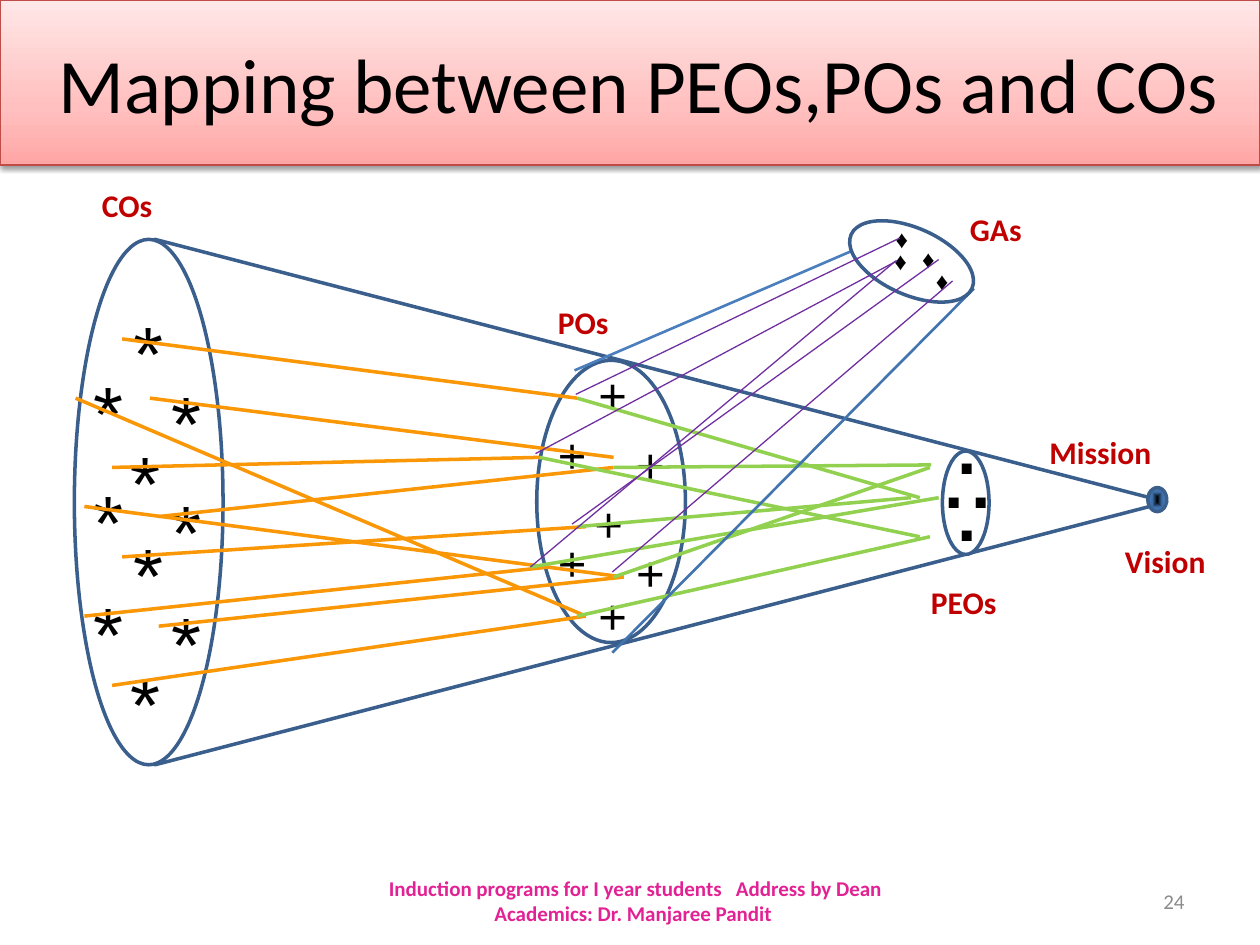
from lxml import etree
from pptx import Presentation
from pptx.dml.color import RGBColor
from pptx.enum import shapes, text
from pptx.oxml import parse_xml
from pptx.oxml.ns import nsdecls, qn
from pptx.util import Inches, Pt


def rgb(code):
    return RGBColor.from_string(code)


def write(frame, words, size, color, font="Calibri", bold=False,
          align=text.PP_ALIGN.LEFT):
    par = frame.paragraphs[0]
    par.alignment = align
    run = par.add_run()
    run.text = words
    run.font.size = Pt(size)
    run.font.name = font
    run.font.bold = bold
    run.font.color.rgb = rgb(color)
    return run


CENTER = text.PP_ALIGN.CENTER
MIDDLE = text.MSO_ANCHOR.MIDDLE
BLUE = "3A5F8C"

deck = Presentation()
deck.slide_width, deck.slide_height = Inches(10), Inches(7.5)
slide = deck.slides.add_slide(deck.slide_layouts[5])
parts = slide.shapes

# Title band with gradient and shadow
title = parts.title
title.left, title.top = Inches(0), Inches(0)
title.width, title.height = Inches(10), Inches(1.31)
title.text_frame.vertical_anchor = MIDDLE
write(title.text_frame, " Mapping between PEOs,POs and COs", 44, "000000",
      align=CENTER)
title.line.color.rgb = rgb("BF4C48")
title.line.width = Pt(0.75)

# Cone, its cross sections and the end point
TRI, OVAL = shapes.MSO_SHAPE.ISOSCELES_TRIANGLE, shapes.MSO_SHAPE.OVAL
outlines = [
    (TRI, 3.16, -0.03, 4.17, 8.03, 90),
    (OVAL, 0.59, 1.9, 1.18, 4.17, 0),
    (OVAL, 4.26, 2.86, 1.18, 2.24, 0),
    (OVAL, 7.48, 3.58, 0.37, 0.82, 0),
    (OVAL, 9.11, 3.87, 0.15, 0.19, 0),
]
ga_oval = (OVAL, 6.97, 1.55, 0.53, 1.05, 294)


def outline(kind, x, y, w, h, turn):
    form = parts.add_shape(kind, Inches(x), Inches(y), Inches(w), Inches(h))
    form.rotation = turn
    form.shadow.inherit = False
    form.fill.solid()
    form.fill.fore_color.rgb = rgb("FFFFFF")
    form.line.color.rgb = rgb(BLUE)
    form.line.width = Pt(2)
    return form


for item in outlines:
    dot = outline(*item)

# Gradients: linear on the title, radial on the end point
fills = [
    (title, [(0, "FFA6A5"), (35, "FFC0BF"), (100, "FFE7E7")],
     '<a:lin ang="16200000" scaled="0"/>'),
    (dot, [(0, "000000"), (50, "3C6CA6"), (100, "4780C5")],
     '<a:path path="shape"><a:fillToRect l="50000" t="50000" r="50000"'
     ' b="50000"/></a:path>'),
]
for form, stops, way in fills:
    marks = "".join(f'<a:gs pos="{pos * 1000}"><a:srgbClr val="{code}"/></a:gs>'
                    for pos, code in stops)
    form.fill.background()
    old = form._element.spPr.find(qn("a:noFill"))
    old.getparent().replace(old, parse_xml(
        f'<a:gradFill {nsdecls("a")} rotWithShape="1"><a:gsLst>{marks}</a:gsLst>'
        f'{way}</a:gradFill>'))
title._element.spPr.append(parse_xml(
    f'<a:effectLst {nsdecls("a")}><a:outerShdw blurRad="39370" dist="20320"'
    ' dir="5400000" rotWithShape="0"><a:srgbClr val="000000">'
    '<a:alpha val="38000"/></a:srgbClr></a:outerShdw></a:effectLst>'))

# Members of each set: sign, size, bold, box size, places
signs = [
    ("*", 44, False, 0.41, 0.84,
     [(0.96, 2.37), (1.26, 2.92), (0.64, 2.84), (0.94, 3.4), (0.96, 4.13),
      (1.26, 4.68), (0.64, 4.6), (0.94, 5.15), (1.26, 3.79), (0.64, 3.71)]),
    ("+", 28, False, 0.4, 0.57,
     [(4.65, 2.84), (4.95, 3.4), (4.33, 3.32), (4.62, 3.87), (4.65, 4.6),
      (4.95, 4.26), (4.33, 4.18)]),
    (".", 40, True, 0.33, 0.77,
     [(7.5, 3.16), (7.5, 3.69), (7.61, 3.43), (7.4, 3.43)]),
]
for sign, size, bold, w, h, spots in signs:
    for x, y in spots:
        box = parts.add_textbox(Inches(x), Inches(y), Inches(w), Inches(h))
        box.text_frame.word_wrap = False
        run = write(box.text_frame, sign, size, "000000", "Arial", bold, CENTER)
        run.font._element.insert(0, parse_xml(
            f'<a:ln {nsdecls("a")} w="18415"><a:solidFill>'
            '<a:srgbClr val="FFFFFF"/></a:solidFill></a:ln>'))

# Links: colour, width, ends
links = [
    ("F99707", 2, [
        (0.97, 2.69, 4.58, 3.16), (1.26, 4.1, 4.87, 3.71),
        (0.67, 4.89, 4.36, 4.5), (0.89, 3.71, 4.28, 3.63),
        (0.97, 4.42, 4.65, 4.18), (0.89, 5.44, 4.65, 4.89),
        (1.26, 4.97, 4.95, 4.58), (0.6, 3.16, 4.65, 4.89),
        (1.19, 3.16, 4.87, 3.63), (0.67, 4.02, 4.95, 4.58)]),
    ("92D050", 2, [
        (4.87, 3.71, 7.39, 3.69), (4.58, 3.16, 7.3, 3.95),
        (4.58, 4.18, 7.23, 3.95), (4.58, 4.89, 7.38, 4.26),
        (4.21, 4.5, 7.45, 3.95), (4.28, 3.63, 7.3, 4.26),
        (4.87, 4.58, 7.38, 3.71)]),
    ("4274AF", 1.5, [(4.86, 5.18, 7.73, 2.29)]),
    ("4B7EBC", 1.5, [(4.56, 2.94, 6.95, 1.91)]),
    ("7030A0", 0.75, [
        (7.14, 1.89, 4.57, 3.13), (7.12, 2.07, 4.25, 3.6),
        (7.45, 2.06, 4.54, 4.16), (7.11, 2.07, 4.21, 4.5),
        (7.56, 2.23, 4.86, 4.54)]),
]
for color, width, ends in links:
    if color == "7030A0":
        # Oval and diamonds of the GAs lie under the purple links
        outline(*ga_oval)
        for x, y in [(7.01, 1.73), (7, 1.9), (7.22, 1.89), (7.33, 2.06)]:
            box = parts.add_textbox(Inches(x), Inches(y), Inches(0.23),
                                    Inches(0.34))
            box.text_frame.word_wrap = True
            write(box.text_frame, "♦", 14, "000000", "Arial")
    for end in ends:
        link = parts.add_connector(shapes.MSO_CONNECTOR.STRAIGHT,
                                   *[Inches(v) for v in end])
        link.line.color.rgb = rgb(color)
        link.line.width = Pt(width)
        etree.SubElement(link._element.spPr, qn("a:effectLst"))

# Labels, page number and footer
RED, LEFT = "C00000", text.PP_ALIGN.LEFT
notes = [
    ("PEOs", 7.29, 4.58, 0.89, 18, RED, True, LEFT),
    ("POs", 4.33, 2.36, 0.88, 18, RED, True, LEFT),
    ("COs", 0.71, 1.43, 0.88, 18, RED, True, LEFT),
    ("Mission", 8.23, 3.39, 1.18, 18, RED, True, LEFT),
    ("GAs", 7.6, 1.62, 0.83, 18, RED, True, LEFT),
    ("Vision", 8.83, 4.25, 0.89, 18, RED, True, LEFT),
    ("24", 7.17, 6.95, 2.33, 12, "8C8C8C", False, text.PP_ALIGN.RIGHT),
    ("Induction programs for I year students   Address by Dean Academics: "
     "Dr. Manjaree Pandit ", 2.66, 6.95, 4.77, 12, "E22294", True, CENTER),
]
for words, x, y, w, size, color, bold, align in notes:
    box = parts.add_textbox(Inches(x), Inches(y), Inches(w), Inches(0.4))
    box.text_frame.word_wrap = True
    box.text_frame.vertical_anchor = MIDDLE if size == 12 else text.MSO_ANCHOR.TOP
    write(box.text_frame, words, size, color, bold=bold, align=align)

deck.save("out.pptx")
